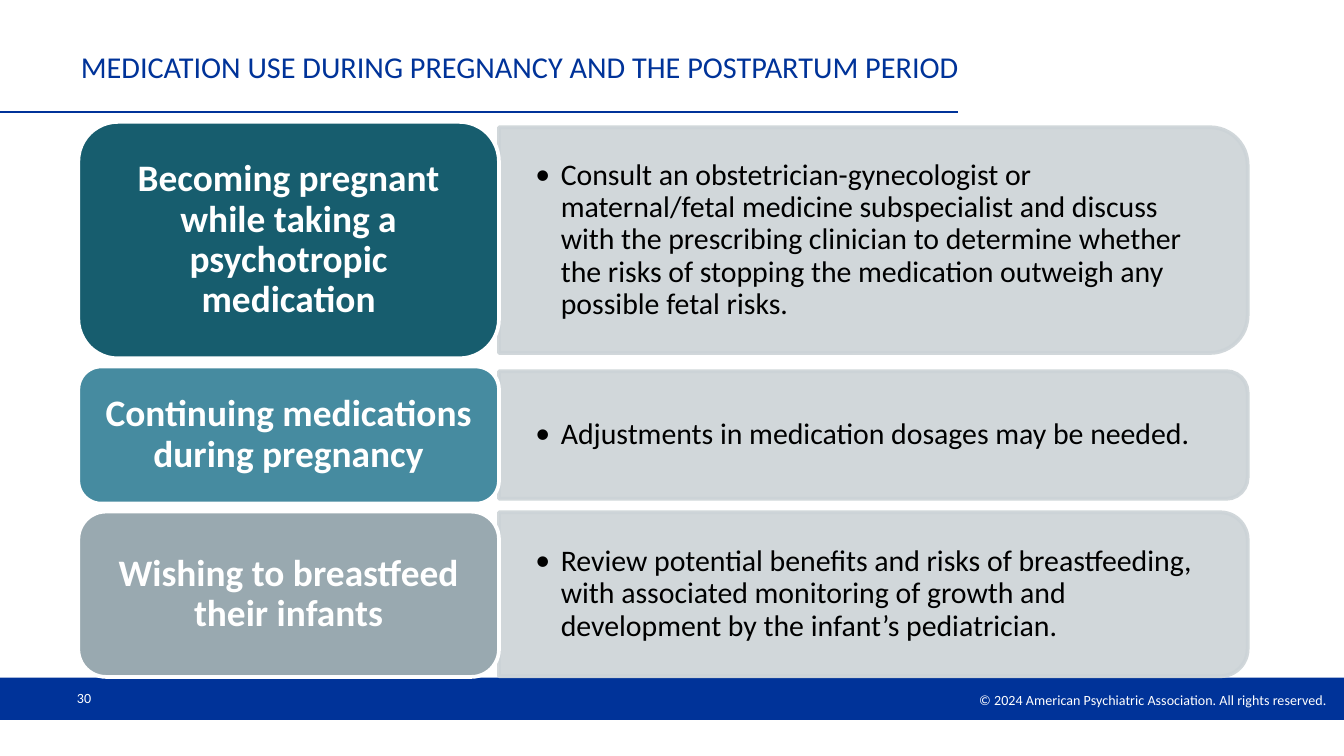
from pptx import Presentation
from pptx.dml.color import RGBColor as RGB
from pptx.enum.shapes import MSO_CONNECTOR as CONN, MSO_SHAPE as SHAPE
from pptx.enum.text import MSO_ANCHOR as ANCHOR, PP_ALIGN as ALIGN
from pptx.oxml.ns import qn
from pptx.util import Inches, Pt
from lxml.etree import SubElement

COLORS = {"navy": "003399", "white": "FFFFFF", "black": "000000", "panel": "CCD3D7",
          "teal": "175D6E", "aqua": "468BA0", "gray": "99A9B0"}
FONT = "Calibri"
COLS, ROWS = 100, 56.25
CELL = Inches(10) / COLS
LABEL_X, LABEL_W = 5.83, 31.3
PANEL_X, PANEL_W = LABEL_X + LABEL_W, 55.7
TOP, GAP = 9.07, 0.6
CORNER_INSET = 0.05

TOPICS = [
    ("teal", 17.6, 16.8, "Becoming pregnant while taking a psychotropic medication",
     "Consult an obstetrician-gynecologist or maternal/fetal medicine subspecialist and discuss "
     "with the prescribing clinician to determine whether the risks of stopping the medication "
     "outweigh any possible fetal risks."),
    ("aqua", 10.2, 9.5, "Continuing medications during pregnancy",
     "Adjustments in medication dosages may be needed."),
    ("gray", 12.3, 12.2, "Wishing to breastfeed their infants",
     "Review potential benefits and risks of breastfeeding, with associated monitoring of growth "
     "and development by the infant’s pediatrician."),
]


def grid(*cells):
    """Convert grid cells to slide lengths."""
    return [round(c * CELL) for c in cells]


def rgb(name):
    """Look up a palette colour."""
    return RGB.from_string(COLORS[name])


def add_block(s, kind, at, fill, line=None):
    """Add a filled preset shape with an optional outline."""
    sp = s.shapes.add_shape(kind, *grid(*at))
    sp.shadow.inherit = False
    sp.fill.solid()
    sp.fill.fore_color.rgb = rgb(fill)
    if line:
        sp.line.color.rgb = rgb(line)
        sp.line.width = Pt(2)
    else:
        sp.line.fill.background()
    return sp


def set_text(sp, text, size, color, align=ALIGN.LEFT, bold=False, insets=(0.1, 0.05), bullet=False):
    """Write one styled paragraph into a shape."""
    tf = sp.text_frame
    tf.word_wrap = True
    tf.vertical_anchor = ANCHOR.MIDDLE
    tf.margin_left = tf.margin_right = Inches(insets[0])
    tf.margin_top = tf.margin_bottom = Inches(insets[1])
    p = tf.paragraphs[0]
    p.alignment = align
    if bullet:
        pPr = p._p.get_or_add_pPr()
        pPr.set("marL", str(Inches(0.19)))
        pPr.set("indent", str(-Inches(0.19)))
        SubElement(pPr, qn("a:buFont"), typeface=FONT)
        SubElement(pPr, qn("a:buChar"), char="•")
    r = p.add_run()
    r.text = text
    r.font.name, r.font.size, r.font.bold = FONT, Pt(size), bold
    r.font.color.rgb = rgb(color)
    return p


def add_text(s, at, *args, **style):
    """Add a text box holding one paragraph."""
    return set_text(s.shapes.add_textbox(*grid(*at)), *args, **style)


def add_rule(s, y, x_end):
    """Add the rule below the title."""
    cx = s.shapes.add_connector(CONN.STRAIGHT, *grid(0, y, x_end, y))
    cx.line.color.rgb = rgb("navy")
    cx.line.width = Pt(0.75)
    SubElement(cx._element.spPr, qn("a:effectLst"))


def add_panel(s, mid, h, text):
    """Add a translucent panel rounded on the right, with its bullet."""
    x = PANEL_X + (PANEL_W - h) / 2
    sp = add_block(s, SHAPE.ROUND_2_SAME_RECTANGLE, (x, mid - PANEL_W / 2, h, PANEL_W),
                   "panel", "panel")
    sp.rotation = 90
    for clr in sp._element.spPr.iter(qn("a:srgbClr")):
        SubElement(clr, qn("a:alpha"), val="90000")
    inset = CORNER_INSET * h
    p = add_text(s, (PANEL_X, mid - h / 2 + inset, PANEL_W - inset, h - 2 * inset),
                 text, 16, "black", insets=(0.27, 0.14), bullet=True)
    p.line_spacing = 0.9


def add_label(s, y, h, fill, text):
    """Add a rounded topic label."""
    sp = add_block(s, SHAPE.ROUNDED_RECTANGLE, (LABEL_X, y, LABEL_W, h), fill, "white")
    p = set_text(sp, text, 20, "white", ALIGN.CENTER, True, (0.08, 0.04))
    p.line_spacing = 0.9


def main():
    """Build and save the slide."""
    prs = Presentation()
    prs.slide_width, prs.slide_height = grid(COLS, ROWS)
    s = prs.slides.add_slide(prs.slide_layouts[6])
    add_block(s, SHAPE.RECTANGLE, (0, 50.43, COLS, 3.15), "navy")
    add_rule(s, 8.33, 71.3)
    add_text(s, (56.3, 50.9, 43.7, 2.3),
             "© 2024 American Psychiatric Association. All rights reserved.",
             7.5, "white", ALIGN.RIGHT, insets=(0.13, 0.05))
    add_text(s, (5.03, 50.45, 23.3, 3), "30", 7.5, "white", insets=(0.07, 0.04))
    add_text(s, (5.03, 2.55, 68.4, 4.8),
             "MEDICATION USE DURING PREGNANCY AND THE POSTPARTUM PERIOD", 16.2, "navy")
    y = TOP
    for fill, label_h, panel_h, label, detail in TOPICS:
        add_panel(s, y + label_h / 2, panel_h, detail)
        add_label(s, y, label_h, fill, label)
        y += label_h + GAP
    prs.save("out.pptx")


if __name__ == "__main__":
    main()
